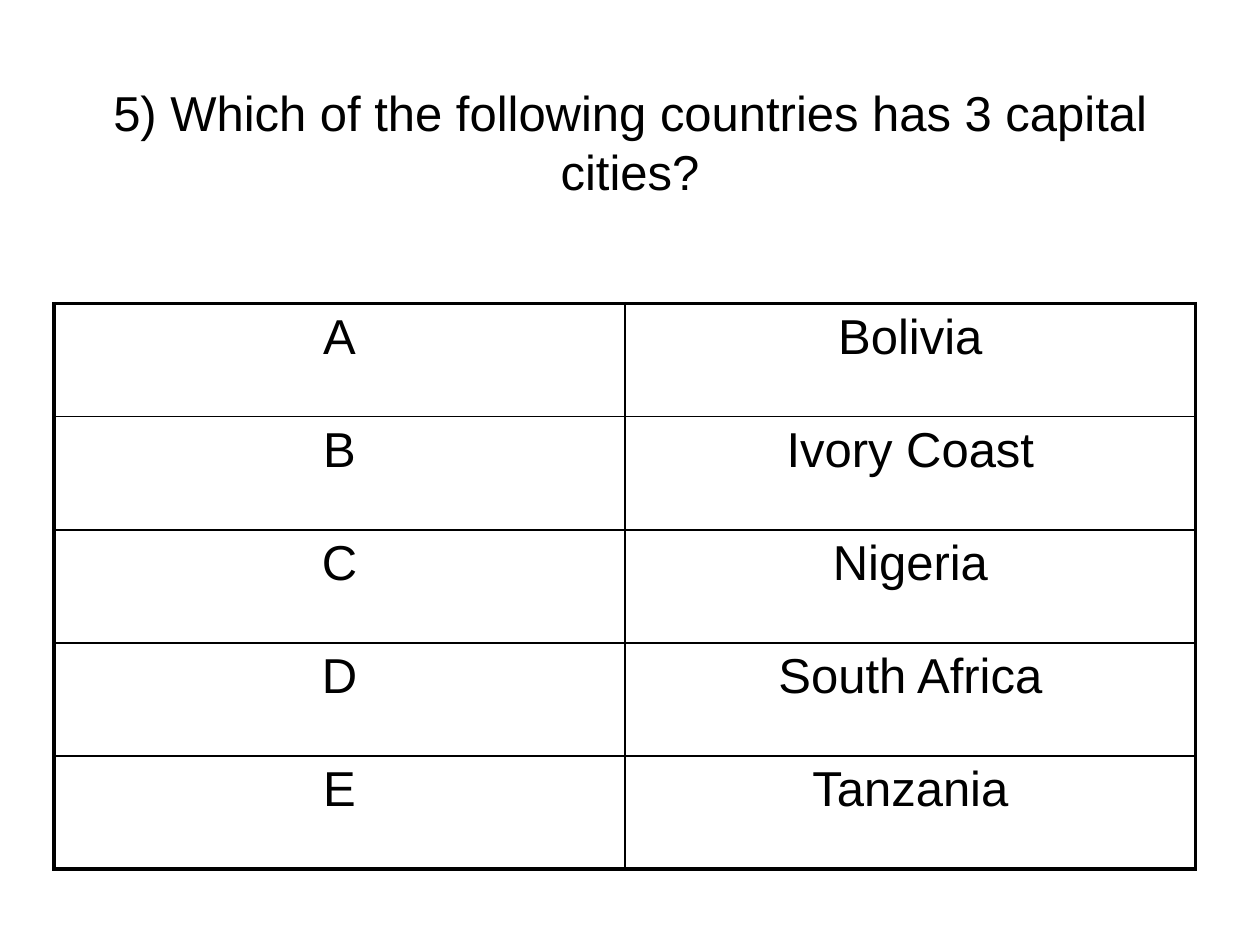
from lxml.etree import SubElement
from pptx import Presentation
from pptx.dml.color import RGBColor
from pptx.enum.text import MSO_ANCHOR, PP_ALIGN
from pptx.oxml.ns import qn
from pptx.util import Inches, Pt

COLOURS = {"ink": "000000", "paper": "FFFFFF"}
FONT = {"name": "Arial", "size": Pt(28), "bold": False}
QUESTION = "5) Which of the following countries has 3 capital cities?"
ANSWERS = ["Bolivia", "Ivory Coast", "Nigeria", "South Africa", "Tanzania"]
OUTER, INNER = Pt(2.25), Pt(1)


def write(frame, wording):
    """Put centred wording in a text frame."""
    frame.text = wording
    paragraph = frame.paragraphs[0]
    paragraph.alignment = PP_ALIGN.CENTER
    for attribute, value in FONT.items():
        setattr(paragraph.font, attribute, value)
    paragraph.font.color.rgb = RGBColor.from_string(COLOURS["ink"])


def add_question(slide):
    """Place the question in the title placeholder."""
    title = slide.shapes.title
    place = {"left": 0.5, "top": 0.3, "width": 9, "height": 1.64}
    for attribute, value in place.items():
        setattr(title, attribute, Inches(value))
    title.text_frame.vertical_anchor = MSO_ANCHOR.MIDDLE
    write(title.text_frame, QUESTION)


def draw_borders(cell, widths):
    """Give each side of a cell a solid line of its own width."""
    properties = cell._tc.get_or_add_tcPr()
    for side, width in widths.items():
        line = SubElement(properties, qn(f"a:ln{side}"), w=str(width))
        fill = SubElement(line, qn("a:solidFill"))
        SubElement(fill, qn("a:srgbClr"), val=COLOURS["ink"])


def add_answers(slide):
    """Add the table of lettered answers with a heavier outer frame."""
    choices = list(zip("ABCDE", ANSWERS))
    last = len(choices) - 1
    table = slide.shapes.add_table(
        len(choices), 2, Inches(0.43), Inches(2.41), Inches(9.06), Inches(4.49)
    ).table
    table.first_row = table.horz_banding = False
    for row, choice in enumerate(choices):
        for column, wording in enumerate(choice):
            cell = table.cell(row, column)
            outer_sides = {"L": column == 0, "R": column == 1, "T": row == 0, "B": row == last}
            draw_borders(cell, {side: OUTER if outer else INNER for side, outer in outer_sides.items()})
            cell.fill.solid()
            cell.fill.fore_color.rgb = RGBColor.from_string(COLOURS["paper"])
            write(cell.text_frame, wording)


def main():
    """Build and save the quiz slide."""
    quiz = Presentation()
    quiz.slide_width, quiz.slide_height = Inches(10), Inches(7.5)
    slide = quiz.slides.add_slide(quiz.slide_layouts[5])
    add_question(slide)
    add_answers(slide)
    quiz.save("out.pptx")


if __name__ == "__main__":
    main()
